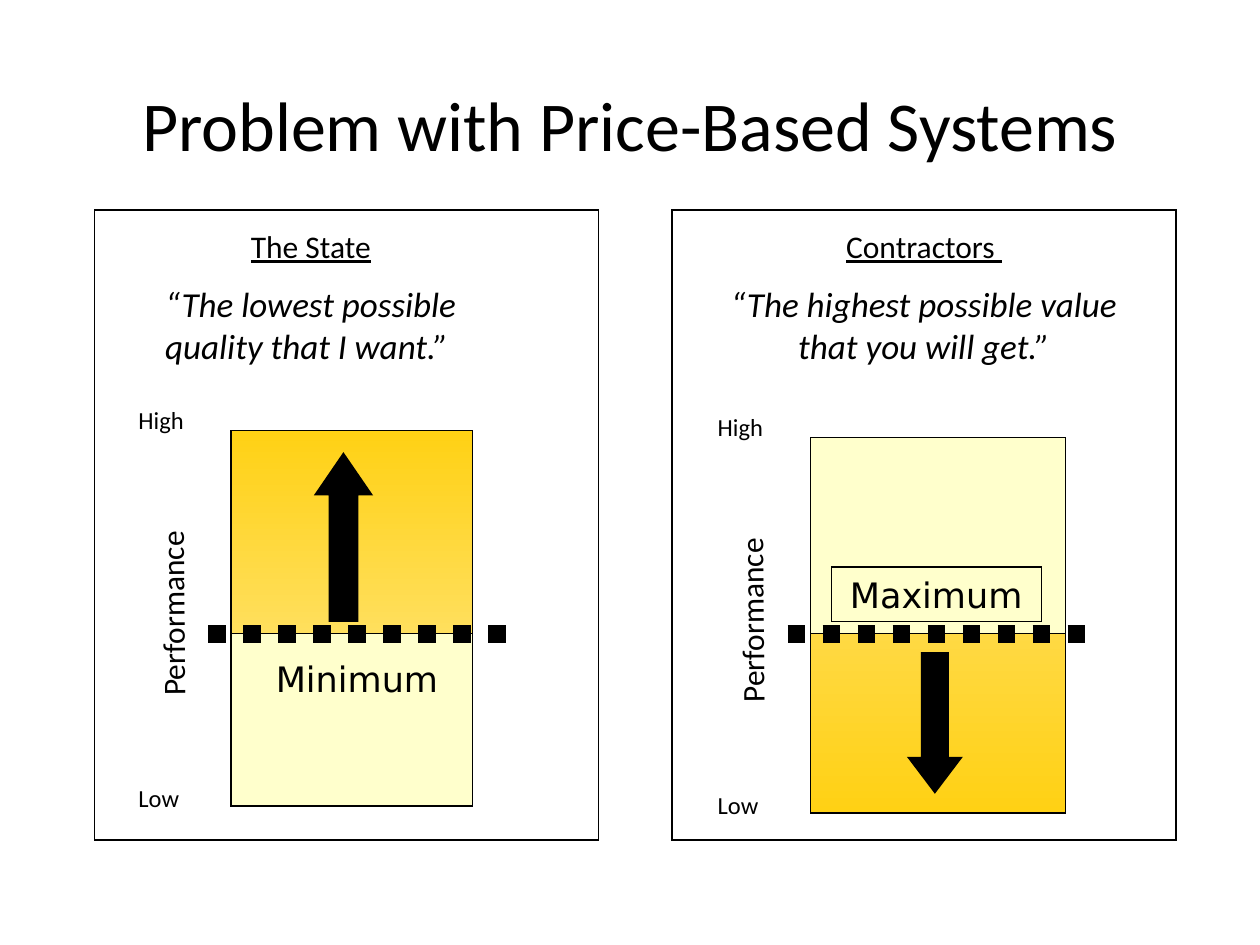
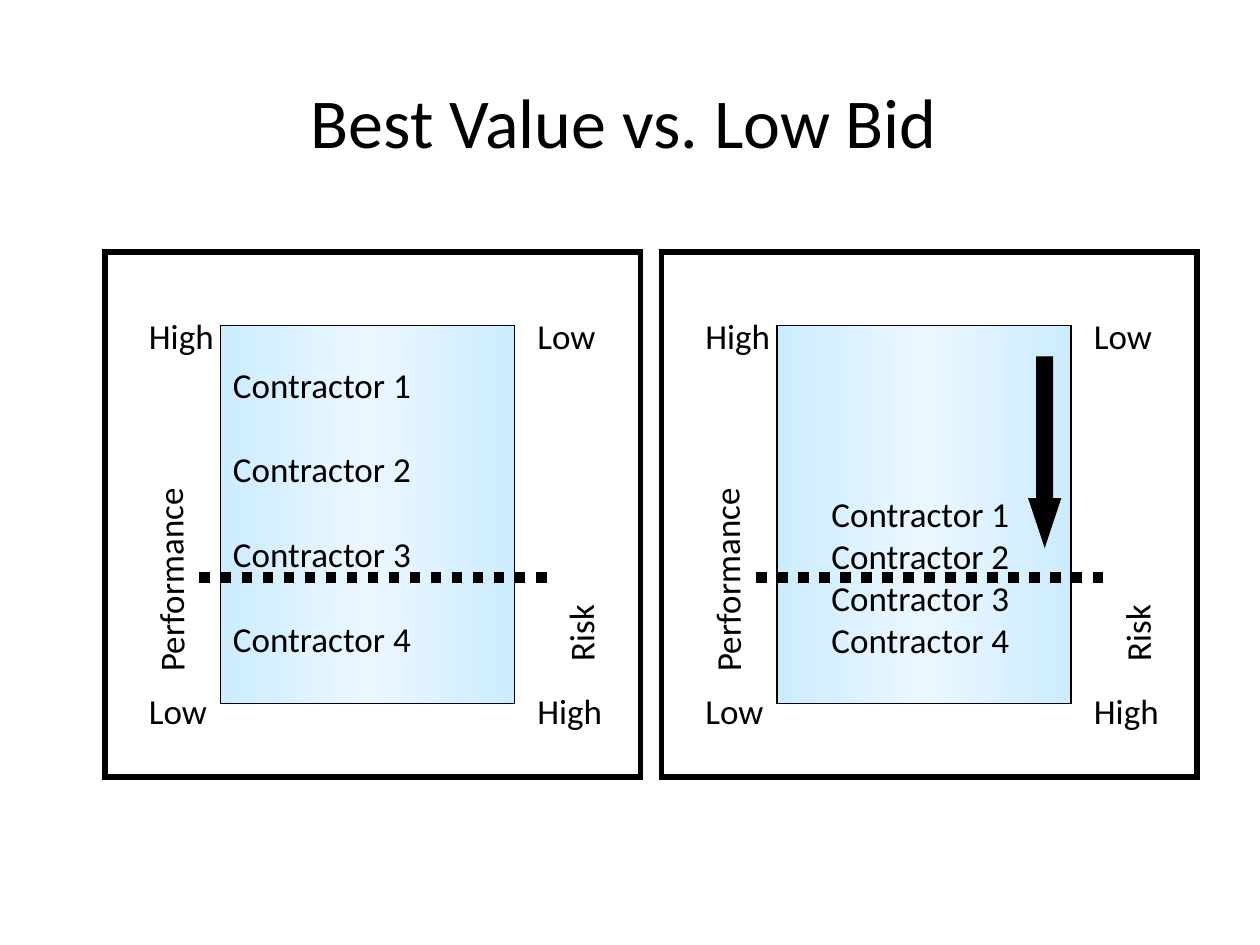
from lxml import etree
from pptx import Presentation
from pptx import util as u
from pptx.dml.color import RGBColor
from pptx.enum import dml, shapes, text
from pptx.oxml.ns import qn

Pt = u.Pt
SHAPE = shapes.MSO_SHAPE
ALIGN = text.PP_ALIGN
COLORS = {
    "ink": "000000",
    "paper": "FFFFFF",
    "pale": "FFFFCC",
    "gold": "FFD114",
    "light_gold": "FFDF5D",
    "mid_gold": "FFD943",
    "blue": "CCECFF",
    "light_blue": "EBF7FF",
}
SIDEWAYS = 269.5


def rgb(name):
    return RGBColor.from_string(COLORS[name])


def format_font(font, **values):
    values = {"name": "Calibri", "size": Pt(18)} | values
    for key, value in values.items():
        setattr(font, key, value)
    font.color.rgb = rgb("ink")


def set_gradient(sp, names, angle):
    """Fill with evenly spaced colour stops; angle is clockwise in degrees."""
    sp.fill.gradient()
    sp.fill.gradient_angle = -angle % 360
    stops = sp._element.spPr.find(".//" + qn("a:gsLst"))
    for stop in list(stops):
        stops.remove(stop)
    for i, name in enumerate(names):
        pos = str(100000 * i // (len(names) - 1))
        gs = etree.SubElement(stops, qn("a:gs"), pos=pos)
        etree.SubElement(gs, qn("a:srgbClr"), val=COLORS[name])


def add_block(s, box, fill=None, kind=SHAPE.RECTANGLE, weight=0.75, adjust=()):
    sp = s.shapes.add_shape(kind, *map(Pt, box))
    sp.shadow.inherit = False
    for i, value in enumerate(adjust):
        sp.adjustments[i] = value
    if fill:
        sp.fill.solid()
        sp.fill.fore_color.rgb = rgb(fill)
    else:
        sp.fill.background()
    sp.line.color.rgb = rgb("ink")
    sp.line.width = Pt(weight)
    etree.SubElement(sp._element.spPr.find(qn("a:ln")), qn("a:miter"), lim="800000")
    return sp


def write(sp, lines, align=ALIGN.LEFT, wrap=True, **font):
    tf = sp.text_frame
    tf.word_wrap = wrap
    tf.vertical_anchor = text.MSO_ANCHOR.TOP
    for i, line in enumerate(lines):
        p = tf.paragraphs[0] if i == 0 else tf.add_paragraph()
        p.alignment = align
        r = p.add_run()
        r.text = line
        format_font(r.font, **font)
    return tf


def add_label(s, box, *lines, rotation=0, **style):
    sp = s.shapes.add_textbox(*map(Pt, box))
    sp.rotation = rotation
    return write(sp, lines, **style)


def add_dotted_line(s, x, y, length, weight):
    line = s.shapes.add_connector(
        shapes.MSO_CONNECTOR.STRAIGHT, Pt(x), Pt(y), Pt(x + length), Pt(y))
    line.line.color.rgb = rgb("ink")
    line.line.width = Pt(weight)
    line.line.dash_style = dml.MSO_LINE.ROUND_DOT
    etree.SubElement(line._element.spPr, qn("a:effectLst"))


def add_title_slide(prs, title, box):
    s = prs.slides.add_slide(prs.slide_layouts[5])
    sp = s.shapes.title
    sp.left, sp.top, sp.width, sp.height = map(Pt, box)
    tf = sp.text_frame
    tf.text = title
    tf.auto_size = text.MSO_AUTO_SIZE.NONE
    tf.vertical_anchor = text.MSO_ANCHOR.MIDDLE
    p = tf.paragraphs[0]
    p.alignment = ALIGN.CENTER
    format_font(p.runs[0].font, size=Pt(40))
    return s


def add_viewpoint(s, box, heading, quote, right_indent=0):
    """Centred heading above a quotation; right_indent applies to the heading."""
    tf = add_label(s, box, heading, quote, align=ALIGN.CENTER)
    head, said = tf.paragraphs
    head.runs[0].font.underline = True
    if right_indent:
        head._p.get_or_add_pPr().set("marR", str(Pt(right_indent)))
    said.space_before = Pt(10.5)
    format_font(said.runs[0].font, size=Pt(20), italic=True)


def add_quality_bar(s, box, limit, wanted, colors):
    """Bar with its scale; wanted is the (top, height) of the gold part."""
    x, y, w, h = box
    add_block(s, box, "pale")
    part = add_block(s, (x, wanted[0], w, wanted[1]))
    set_gradient(part, colors, 90)
    for name, dy in (("High", -18), ("Low", 198)):
        add_label(s, (x - 60, y + dy, 60, 24), name, size=Pt(14))
    add_label(s, (x - 127, y + 90, 187, 29), "Performance",
              rotation=SIDEWAYS, align=ALIGN.CENTER)
    add_dotted_line(s, x - 13, limit, 177, 10)


def build_price_slide(prs):
    s = add_title_slide(prs, "Problem with Price-Based Systems", (0, 43, 720, 55.5))
    for x in (54, 384):
        add_block(s, (x, 120, 288, 360))
    limit = 362.2
    limit_style = {"align": ALIGN.CENTER, "name": "DejaVu Sans", "size": Pt(20)}

    add_quality_bar(s, (132, 246, 138, 214.6), limit, (246, 116.2),
                    ("gold", "light_gold"))
    add_block(s, (180, 259, 32.5, 96), "ink", SHAPE.UP_ARROW, adjust=(0.5, 0.73))
    add_viewpoint(s, (60, 126, 264, 89), "The State",
                  "“The lowest possible quality that I want.” ", right_indent=28.8)
    add_label(s, (144, 372, 120, 31), "Minimum", **limit_style)

    add_quality_bar(s, (463, 250, 146, 214.6), limit, (limit, 102.4),
                    ("mid_gold", "gold"))
    add_block(s, (519, 373, 30.5, 80), "ink", SHAPE.DOWN_ARROW, adjust=(0.5, 0.66))
    add_viewpoint(s, (396, 126, 264, 89), "Contractors ",
                  "“The highest possible value that you will get.”")
    write(add_block(s, (475, 324, 120, 31)), ["Maximum"], **limit_style)


def add_risk_panel(s, x, y):
    """Framed bar with performance on its left and risk on its right."""
    add_block(s, (x, y, 306, 300), "paper", weight=3)
    bar = add_block(s, (x + 66, y + 42, 168, 216))
    set_gradient(bar, ("blue", "light_blue", "blue"), 0)
    ends = (("High", 18, 32.4), ("Low", 18, 246.2),
            ("Low", 240, 32.4), ("High", 240, 246.2))
    for name, dx, dy in ends:
        add_label(s, (x + dx, y + dy, 60, 31.7), name, size=Pt(20))
    for name, dx, dy in (("Performance", -56.4, 137.5), ("Risk", 177.8, 131.8)):
        add_label(s, (x + dx, y + dy, 187, 31.7), name,
                  rotation=SIDEWAYS, size=Pt(20))
    add_dotted_line(s, x + 54, y + 186, 204, 6)


def build_bid_slide(prs):
    s = add_title_slide(prs, "Best Value vs. Low Bid", (0, 41.8, 713, 54))
    contractors = [f"Contractor {n}" for n in range(1, 5)]
    left, right, top = 60, 378, 144
    add_risk_panel(s, left, top)
    for i, name in enumerate(contractors):
        add_label(s, (left + 66, top + 60 + 48.4 * i, 168, 31.7), name, size=Pt(20))
    add_risk_panel(s, right, top)
    add_block(s, (right + 210, top + 60, 18, 108), "ink", SHAPE.DOWN_ARROW,
              adjust=(0.5, 1.5))
    add_label(s, (right + 90, top + 134, 125, 104.4), *contractors,
              wrap=False, size=Pt(20))


def main():
    prs = Presentation()
    prs.slide_width, prs.slide_height = Pt(720), Pt(540)
    build_price_slide(prs)
    build_bid_slide(prs)
    prs.save("out.pptx")


if __name__ == "__main__":
    main()
